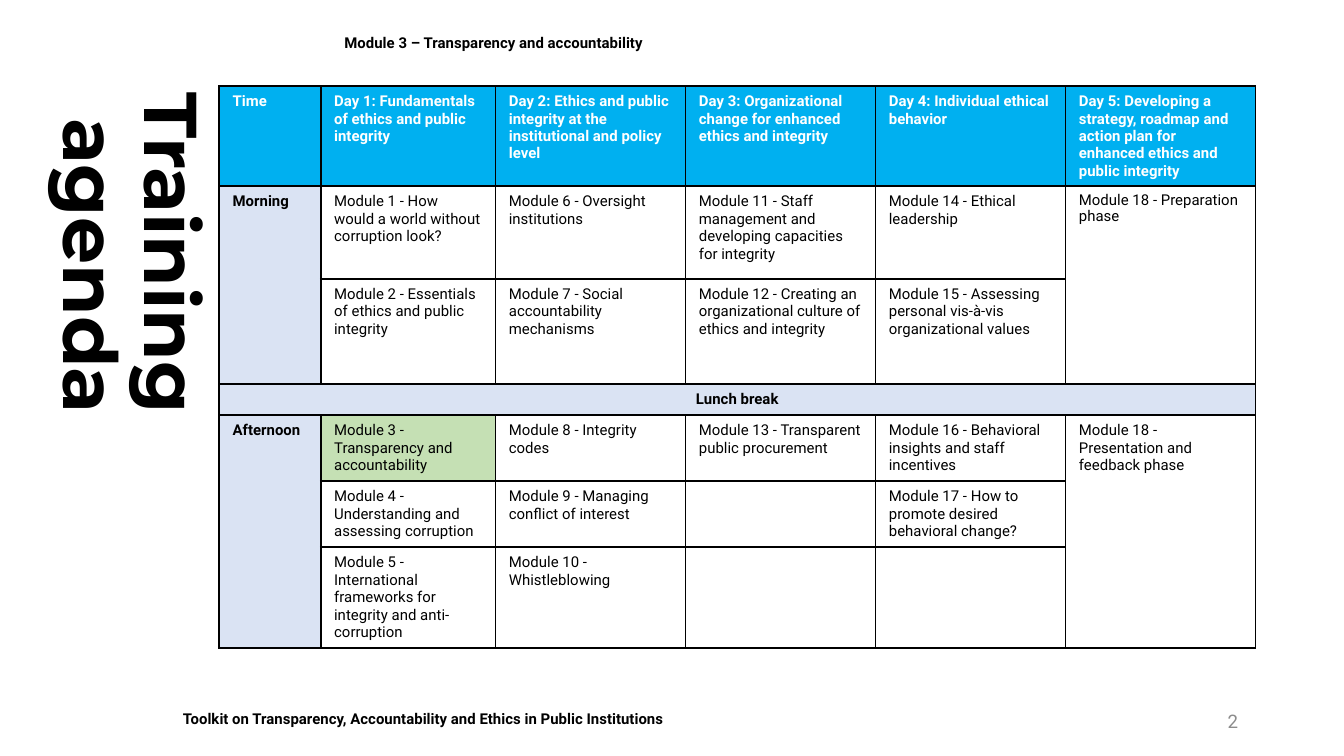
from dataclasses import dataclass
from typing import NamedTuple

from pptx import Presentation
from pptx.dml.color import RGBColor
from pptx.enum.shapes import MSO_SHAPE
from pptx.enum.text import MSO_ANCHOR, MSO_AUTO_SIZE, PP_ALIGN
from pptx.oxml.ns import qn
from pptx.util import Pt
from lxml.etree import SubElement


@dataclass(frozen=True)
class Theme:
    black: str = "000000"
    white: str = "FFFFFF"
    blue: str = "00B0F0"
    pale: str = "DAE3F3"
    green: str = "C5E0B4"
    gray: str = "8C8C8C"
    head: str = "Montserrat"
    body: str = "Roboto"
    big: float = 40
    page: float = 10
    small: float = 8


class Box(NamedTuple):
    left: float
    top: float
    width: float
    height: float

    def points(self) -> list:
        return [Pt(side) for side in self]


class Label(NamedTuple):
    text: str
    box: Box
    size: float
    color: str
    bold: bool = True
    align: PP_ALIGN = PP_ALIGN.LEFT
    fill: str = ""


class Entry(NamedTuple):
    row: int
    col: int
    text: str
    fill: str = ""
    color: str = "000000"
    bold: bool = False
    align: PP_ALIGN = PP_ALIGN.LEFT
    rows: int = 1
    cols: int = 1
    pitch: float = 1.0


THEME = Theme()
WIDTHS = [54.4, 93.6] + [101.8] * 4
HEIGHTS = [53.6, 49.8, 56.3, 16.6, 35.4, 35.4, 54.1]
GRID = Box(117.4, 46.1, sum(WIDTHS), sum(HEIGHTS))

LABELS = [
    Label("Toolkit on Transparency, Accountability and Ethics in Public Institutions",
          Box(90.9, 376.4, 516.2, 17.3), THEME.small, THEME.black, fill=THEME.white),
    Label("2", Box(508.3, 375.3, 162, 21.6), THEME.page, THEME.gray, False, PP_ALIGN.RIGHT),
    Label("Module 3 – Transparency and accountability",
          Box(177.4, 7.2, 493.2, 31.7), THEME.small, THEME.black),
]

DAYS = [
    "Time",
    "Day 1: Fundamentals of ethics and public integrity",
    "Day 2: Ethics and public integrity at the institutional and policy level",
    "Day 3: Organizational change for enhanced ethics and integrity",
    "Day 4: Individual ethical behavior",
    "Day 5: Developing a strategy, roadmap and action plan for enhanced ethics and public integrity",
]

# Modules of days 1 to 4, by table row
PLAN = {
    1: ["Module 1 - How would a world without corruption look?",
        "Module 6 - Oversight institutions",
        "Module 11 - Staff management and developing capacities for integrity",
        "Module 14 - Ethical leadership"],
    2: ["Module 2 - Essentials of ethics and public integrity",
        "Module 7 - Social accountability mechanisms",
        "Module 12 - Creating an organizational culture of ethics and integrity",
        "Module 15 - Assessing personal vis-à-vis organizational values"],
    4: ["Module 3 - Transparency and accountability",
        "Module 8 - Integrity codes",
        "Module 13 - Transparent public procurement",
        "Module 16 - Behavioral insights and staff incentives"],
    5: ["Module 4 - Understanding and assessing corruption",
        "Module 9 - Managing conflict of interest",
        "",
        "Module 17 - How to promote desired behavioral change?"],
    6: ["Module 5 - International frameworks for integrity and anti-corruption",
        "Module 10 - Whistleblowing", "", ""],
}
CURRENT = (4, 1)

# Cells that span rows or columns
SPANS = [
    Entry(1, 0, "Morning", THEME.pale, bold=True, rows=2),
    Entry(1, 5, "Module 18 - Preparation phase", rows=2, pitch=0.9),
    Entry(3, 0, "Lunch break", THEME.pale, bold=True, align=PP_ALIGN.CENTER, cols=6),
    Entry(4, 0, "Afternoon", THEME.pale, bold=True, rows=3),
    Entry(4, 5, "Module 18 - Presentation and feedback phase", rows=3),
]


def style(para, size: float, color: str, bold: bool, face: str = THEME.body) -> None:
    font = para.font
    font.size, font.bold, font.name = Pt(size), bold, face
    font.color.rgb = RGBColor.from_string(color)


def add_label(slide, label: Label) -> None:
    if label.fill:
        shape = slide.shapes.add_shape(MSO_SHAPE.RECTANGLE, *label.box.points())
        shape.shadow.inherit = False
        shape.fill.solid()
        shape.fill.fore_color.rgb = RGBColor.from_string(label.fill)
        shape.line.fill.background()
    else:
        shape = slide.shapes.add_textbox(*label.box.points())
    frame = shape.text_frame
    frame.word_wrap = True
    frame.vertical_anchor = MSO_ANCHOR.MIDDLE
    para = frame.paragraphs[0]
    para.text, para.alignment = label.text, label.align
    style(para, label.size, label.color, label.bold)


def add_title(slide, text: str, box: Box) -> None:
    title = slide.shapes.title
    title.left, title.top, title.width, title.height = box.points()
    frame = title.text_frame
    frame.word_wrap = True
    frame.auto_size = MSO_AUTO_SIZE.NONE
    frame.vertical_anchor = MSO_ANCHOR.MIDDLE
    # Lines run downward, from right to left
    frame._txBody.bodyPr.set("vert", "eaVert")
    para = frame.paragraphs[0]
    para.text, para.alignment, para.line_spacing = text, PP_ALIGN.RIGHT, 0.9
    style(para, THEME.big, THEME.black, True, THEME.head)


def add_edges(cell) -> None:
    props = cell._tc.get_or_add_tcPr()
    for side in ("a:lnL", "a:lnR", "a:lnT", "a:lnB"):
        line = SubElement(props, qn(side), w=str(Pt(1)))
        fill = SubElement(line, qn("a:solidFill"))
        SubElement(fill, qn("a:srgbClr"), val=THEME.black)


def fill_cell(table, entry: Entry) -> None:
    cell = table.cell(entry.row, entry.col)
    if entry.rows * entry.cols > 1:
        cell.merge(table.cell(entry.row + entry.rows - 1, entry.col + entry.cols - 1))
    if entry.fill:
        cell.fill.solid()
        cell.fill.fore_color.rgb = RGBColor.from_string(entry.fill)
    para = cell.text_frame.paragraphs[0]
    para.text, para.alignment, para.line_spacing = entry.text, entry.align, entry.pitch
    style(para, THEME.small, entry.color, entry.bold)


def add_grid(slide, entries: list[Entry]) -> None:
    table = slide.shapes.add_table(len(HEIGHTS), len(WIDTHS), *GRID.points()).table
    table.first_row = table.horz_banding = False
    for col, width in zip(table.columns, WIDTHS):
        col.width = Pt(width)
    for row, height in zip(table.rows, HEIGHTS):
        row.height = Pt(height)
    for cell in table.iter_cells():
        add_edges(cell)
        cell.fill.background()
        cell.margin_bottom = Pt(1)
        style(cell.text_frame.paragraphs[0], THEME.small, THEME.black, False)
    for entry in entries:
        fill_cell(table, entry)


def main() -> None:
    deck = Presentation()
    deck.slide_width, deck.slide_height = Pt(720), Pt(405)
    slide = deck.slides.add_slide(deck.slide_layouts[5])

    # Title, header, footer and page number
    add_title(slide, "Training agenda", Box(20.2, 46.1, 97.2, 319))
    for label in LABELS:
        add_label(slide, label)

    # Agenda table
    heads = [Entry(0, col, day, THEME.blue, THEME.white, True)
             for col, day in enumerate(DAYS)]
    items = [Entry(row, col, text, THEME.green if (row, col) == CURRENT else "")
             for row, texts in PLAN.items()
             for col, text in enumerate(texts, 1) if text]
    add_grid(slide, heads + items + SPANS)
    deck.save("out.pptx")


if __name__ == "__main__":
    main()
